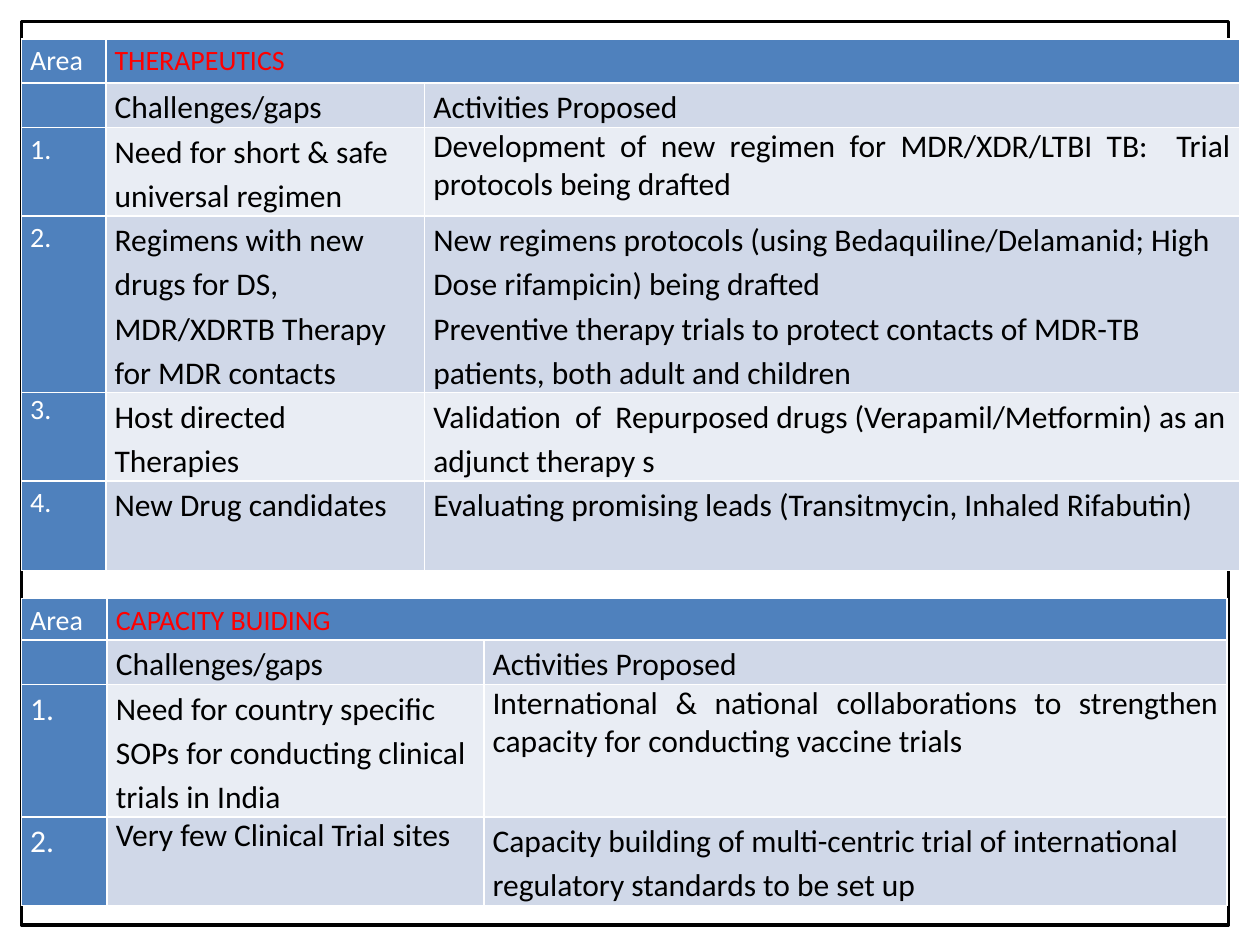
from dataclasses import dataclass

from pptx import Presentation
from pptx.dml.color import RGBColor
from pptx.enum.shapes import MSO_SHAPE
from pptx.enum.text import PP_ALIGN
from pptx.util import Inches, Pt


@dataclass(frozen=True)
class Theme:
    font: str = "Calibri"
    header_size: int = 16
    body_size: int = 18
    blue: RGBColor = RGBColor(0x4F, 0x81, 0xBD)
    dark_band: RGBColor = RGBColor(0xD0, 0xD8, 0xE8)
    light_band: RGBColor = RGBColor(0xE9, 0xED, 0xF4)
    white: RGBColor = RGBColor(0xFF, 0xFF, 0xFF)
    black: RGBColor = RGBColor(0, 0, 0)
    red: RGBColor = RGBColor(0xFF, 0, 0)


theme = Theme()
column_headings = ["", "Challenges/gaps", "Activities Proposed"]

therapeutics = {
    "top": 0.31,
    "columns": [0.67, 2.53, 6.47],
    "row_heights": [0.35, 0.35, 0.70, 1.40, 0.70, 0.71],
    "number_size": theme.header_size,
    "rows": [
        ["Area", "THERAPEUTICS", ""],
        column_headings,
        ["1.", "Need for short & safe universal regimen",
         "Development of new regimen for MDR/XDR/LTBI TB:  Trial protocols being drafted"],
        ["2.", "Regimens with new drugs for DS, MDR/XDRTB Therapy for MDR contacts",
         "New regimens protocols (using Bedaquiline/Delamanid; High Dose rifampicin) being drafted\n"
         "Preventive therapy trials to protect contacts of MDR-TB patients, both adult and children"],
        ["3.", "Host directed Therapies",
         "Validation  of  Repurposed drugs (Verapamil/Metformin) as an adjunct therapy s"],
        ["4.", "New Drug candidates",
         "Evaluating promising leads (Transitmycin, Inhaled Rifabutin)"],
    ],
    "justified": [(2, 2)],
    "single_spaced": [(2, 2), (4, 0)],
}

capacity_building = {
    "top": 4.75,
    "columns": [0.68, 2.99, 5.90],
    "row_heights": [0.33, 0.35, 1.05, 0.70],
    "number_size": theme.body_size,
    "rows": [
        ["Area", "CAPACITY BUIDING", ""],
        column_headings,
        ["1.", "Need for country specific SOPs for conducting clinical trials in India",
         "International & national collaborations to strengthen capacity for conducting vaccine trials"],
        ["2.", "Very few Clinical Trial sites",
         "Capacity building of multi-centric trial of international regulatory standards to be set up"],
    ],
    "justified": [(2, 2), (3, 1)],
    "single_spaced": [(2, 2), (3, 1)],
}

presentation = Presentation()
presentation.slide_width = Inches(10)
presentation.slide_height = Inches(7.5)
slide = presentation.slides.add_slide(presentation.slide_layouts[6])

frame = slide.shapes.add_shape(
    MSO_SHAPE.RECTANGLE, Inches(0.17), Inches(0.17), Inches(9.58), Inches(7.17))
frame.shadow.inherit = False
frame.fill.background()
frame.line.color.rgb = theme.black
frame.line.width = Pt(2)

for section in (therapeutics, capacity_building):
    table = slide.shapes.add_table(
        len(section["rows"]), len(section["columns"]),
        Inches(0.17), Inches(section["top"]),
        Inches(sum(section["columns"])), Inches(sum(section["row_heights"]))).table
    table.first_col = True
    for column, width in zip(table.columns, section["columns"]):
        column.width = Inches(width)
    for row, height in zip(table.rows, section["row_heights"]):
        row.height = Inches(height)
    table.cell(0, 1).merge(table.cell(0, 2))

    for row_index, row_texts in enumerate(section["rows"]):
        for column_index, text in enumerate(row_texts):
            cell = table.cell(row_index, column_index)
            cell.margin_left = cell.margin_right = Inches(0.07)
            cell.margin_top = cell.margin_bottom = 0

            if row_index == 0:
                fill, size = theme.blue, theme.header_size
                color = theme.red if column_index else theme.white
            elif column_index == 0:
                fill, size, color = theme.blue, section["number_size"], theme.white
            else:
                fill = theme.dark_band if row_index % 2 else theme.light_band
                size, color = theme.body_size, theme.black
            cell.fill.solid()
            cell.fill.fore_color.rgb = fill

            if not text:
                continue
            position = (row_index, column_index)
            for paragraph_index, line in enumerate(text.split("\n")):
                text_frame = cell.text_frame
                paragraph = text_frame.add_paragraph() if paragraph_index else text_frame.paragraphs[0]
                paragraph.line_spacing = 1.0 if position in section["single_spaced"] else 1.15
                if position in section["justified"]:
                    paragraph.alignment = PP_ALIGN.JUSTIFY
                run = paragraph.add_run()
                run.text = line
                run.font.name = theme.font
                run.font.size = Pt(size)
                run.font.bold = False
                run.font.color.rgb = color

presentation.save("out.pptx")
